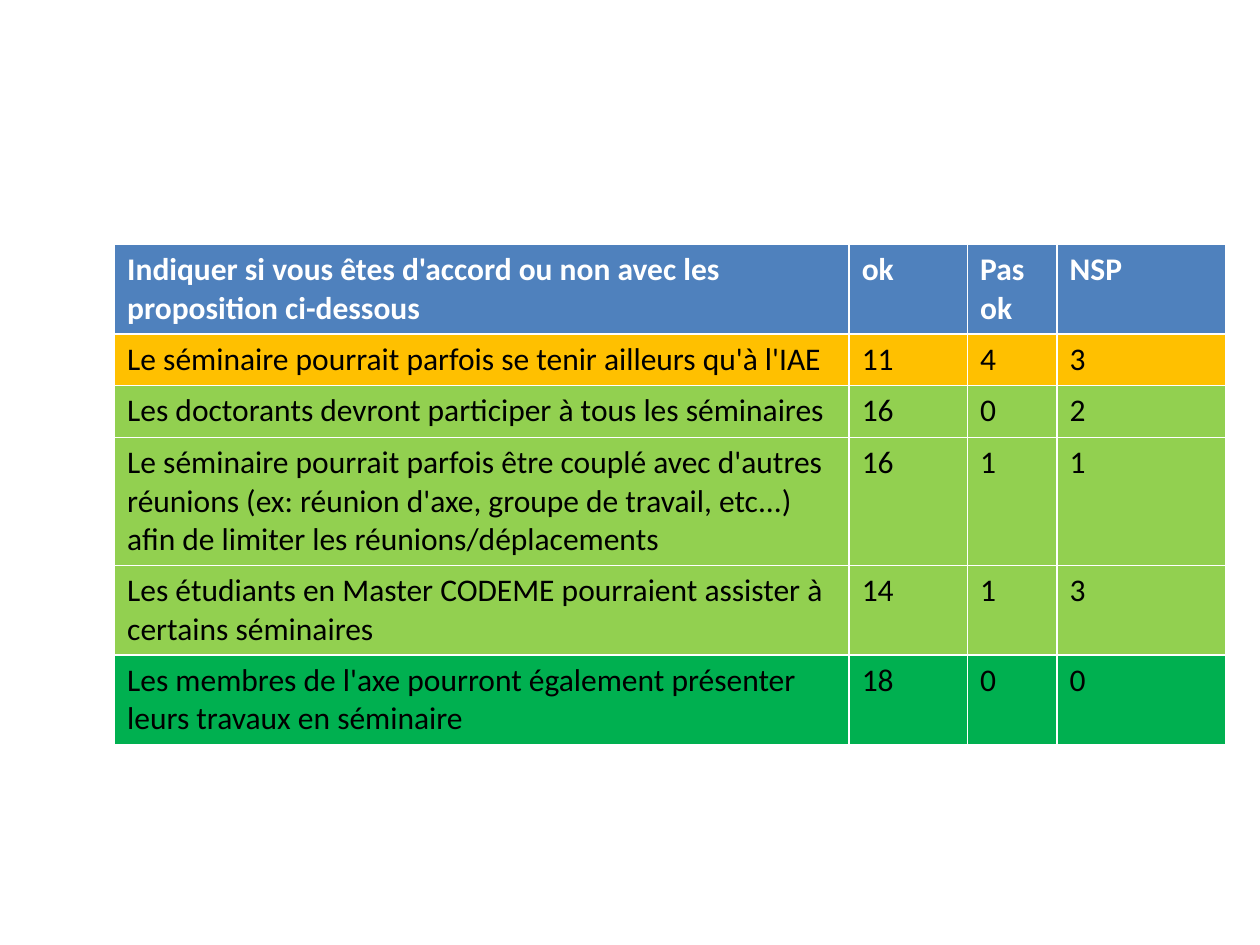
from dataclasses import dataclass

from pptx import Presentation
from pptx.dml.color import RGBColor
from pptx.util import Inches, Pt

COLORS = {
    "header": "4F81BD",
    "mixed": "FFC000",
    "favourable": "92D050",
    "unanimous": "00B050",
    "white": "FFFFFF",
    "black": "000000",
}
COLUMN_WIDTHS = (5.83, 0.94, 0.71, 1.34)
ROW_HEIGHT = 0.41
TABLE_LEFT, TABLE_TOP, TABLE_HEIGHT = 0.91, 1.94, 3.91


@dataclass(frozen=True)
class SurveyRow:
    proposal: str
    answers: tuple[str, str, str]
    fill: str
    is_header: bool = False


SURVEY_ROWS = (
    SurveyRow("Indiquer si vous êtes d'accord ou non avec les proposition ci-dessous",
              ("ok", "Pas ok", "NSP"), "header", is_header=True),
    SurveyRow("Le séminaire pourrait parfois se tenir ailleurs qu'à l'IAE",
              ("11", "4", "3"), "mixed"),
    SurveyRow("Les doctorants devront participer à tous les séminaires",
              ("16", "0", "2"), "favourable"),
    SurveyRow("Le séminaire pourrait parfois être couplé avec d'autres réunions "
              "(ex: réunion d'axe, groupe de travail, etc...) "
              "afin de limiter les réunions/déplacements",
              ("16", "1", "1"), "favourable"),
    SurveyRow("Les étudiants en Master CODEME pourraient assister à certains séminaires",
              ("14", "1", "3"), "favourable"),
    SurveyRow("Les membres de l'axe pourront également présenter leurs travaux en séminaire",
              ("18", "0", "0"), "unanimous"),
)


def write_text(frame, text: str, *, color: str, bold: bool = False,
               size: float = 18, font: str = "Calibri") -> None:
    span = frame.paragraphs[0].add_run()
    span.text = text
    span.font.name = font
    span.font.size = Pt(size)
    span.font.bold = bold
    span.font.color.rgb = RGBColor.from_string(COLORS[color])


def add_survey_table(page, rows: tuple[SurveyRow, ...]) -> None:
    """Add the table; its default style supplies the white cell borders."""
    table_frame = page.shapes.add_table(
        len(rows), len(COLUMN_WIDTHS), Inches(TABLE_LEFT), Inches(TABLE_TOP),
        Inches(sum(COLUMN_WIDTHS)), Inches(TABLE_HEIGHT))
    table = table_frame.table
    for column, width in zip(table.columns, COLUMN_WIDTHS):
        column.width = Inches(width)
    for table_row, row in zip(table.rows, rows):
        table_row.height = Inches(ROW_HEIGHT)
        for cell, text in zip(table_row.cells, (row.proposal, *row.answers)):
            cell.fill.solid()
            cell.fill.fore_color.rgb = RGBColor.from_string(COLORS[row.fill])
            write_text(cell.text_frame, text, bold=row.is_header,
                       color="white" if row.is_header else "black")
    # Rows grow with their text, so the frame is taller than the minimum heights.
    table_frame.height = Inches(TABLE_HEIGHT)


def main() -> None:
    deck = Presentation()
    deck.slide_width, deck.slide_height = Inches(10), Inches(7.5)
    blank_layout = deck.slide_layouts[6]
    page = deck.slides.add_slide(blank_layout)
    add_survey_table(page, SURVEY_ROWS)
    deck.save("out.pptx")


if __name__ == "__main__":
    main()
